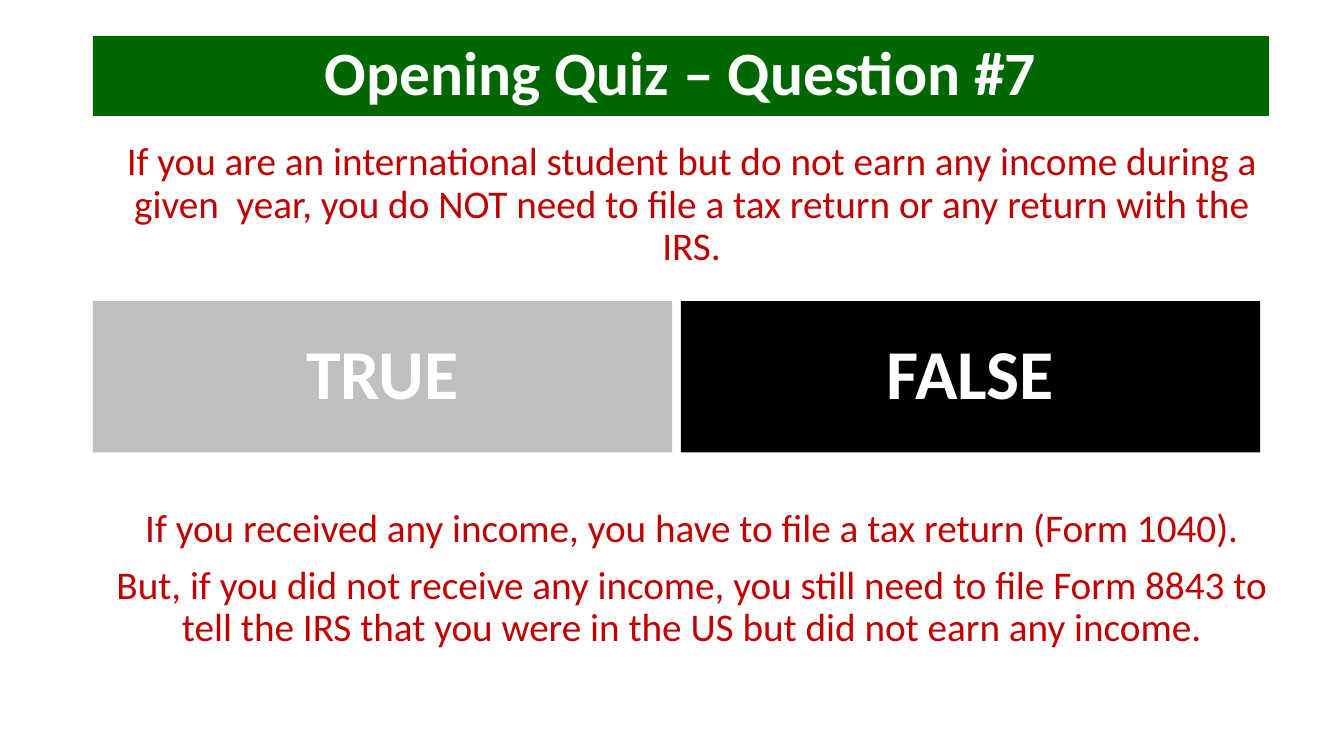
"""Build the quiz slide on filing a tax return."""
from pptx import Presentation
from pptx.dml.color import RGBColor
from pptx.enum import shapes, text
from pptx.util import Cm, Pt

LEFT = 2.34
ANSWER_WIDTH = 14.6
ANSWER_GAP = 0.22
HEADING = {"size": Pt(44), "bold": True}
BODY = {"size": Pt(28), "bold": False}
ANSWER = {"size": Pt(50), "bold": True}
QUESTION = ("If you are an international student but do not earn any income "
            "during a given  year, you do NOT need to file a tax return or any "
            "return with the IRS.")
EXPLANATION = (
    "If you received any income, you have to file a tax return (Form 1040).",
    "But, if you did not receive any income, you still need to file Form 8843 to "
    "tell the IRS that you were in the US but did not earn any income.",
)


def color(hex_code):
    """Turn a hex string into a colour."""
    return RGBColor.from_string(hex_code)


def place(part, left, top, width, height):
    """Set position and size in centimetres."""
    part.left, part.top = Cm(left), Cm(top)
    part.width, part.height = Cm(width), Cm(height)


def fill(part, hex_code):
    """Give a part a solid fill."""
    part.fill.solid()
    part.fill.fore_color.rgb = color(hex_code)


def write(part, lines, font_format, hex_code, anchor):
    """Write centred paragraphs with one format."""
    frame = part.text_frame
    frame.word_wrap = True
    frame.auto_size = text.MSO_AUTO_SIZE.NONE
    frame.vertical_anchor = anchor
    for index, line in enumerate(lines):
        paragraph = frame.add_paragraph() if index else frame.paragraphs[0]
        paragraph.text = line
        paragraph.alignment = text.PP_ALIGN.CENTER
        paragraph.line_spacing = 0.9
        paragraph.space_before = Pt(10 if index else 0)
        for name, value in font_format.items():
            setattr(paragraph.font, name, value)
        paragraph.font.name = "Calibri"
        paragraph.font.color.rgb = color(hex_code)


def add_heading(slide, wording):
    """Format the title placeholder as a green band."""
    heading = slide.shapes.title
    place(heading, LEFT, 0.91, 29.64, 2.01)
    fill(heading, "006600")
    write(heading, [wording], HEADING, "FFFFFF", text.MSO_ANCHOR.MIDDLE)


def add_statement(slide, lines, top, height):
    """Add a block of red text."""
    statement = slide.shapes.add_textbox(0, 0, 0, 0)
    place(statement, LEFT, top, 30.18, height)
    write(statement, lines, BODY, "C00000", text.MSO_ANCHOR.TOP)


def add_answer(slide, column, wording, hex_code):
    """Add one answer panel in its column."""
    answer = slide.shapes.add_shape(shapes.MSO_SHAPE.RECTANGLE, 0, 0, 0, 0)
    place(answer, LEFT + column * (ANSWER_WIDTH + ANSWER_GAP), 7.59, ANSWER_WIDTH, 3.81)
    answer.shadow.inherit = False
    fill(answer, hex_code)
    answer.line.fill.background()
    write(answer, [wording], ANSWER, "FFFFFF", text.MSO_ANCHOR.MIDDLE)


def main():
    """Build and save the slide."""
    deck = Presentation()
    deck.slide_width, deck.slide_height = Cm(33.87), Cm(19.05)
    slide = deck.slides.add_slide(deck.slide_layouts[5])
    add_heading(slide, "Opening Quiz – Question #7")
    add_statement(slide, [QUESTION], 3.45, 3.8)
    for column, (wording, hex_code) in enumerate((("TRUE", "BFBFBF"), ("FALSE", "000000"))):
        add_answer(slide, column, wording, hex_code)
    add_statement(slide, EXPLANATION, 12.7, 4.4)
    deck.save("out.pptx")


if __name__ == "__main__":
    main()
